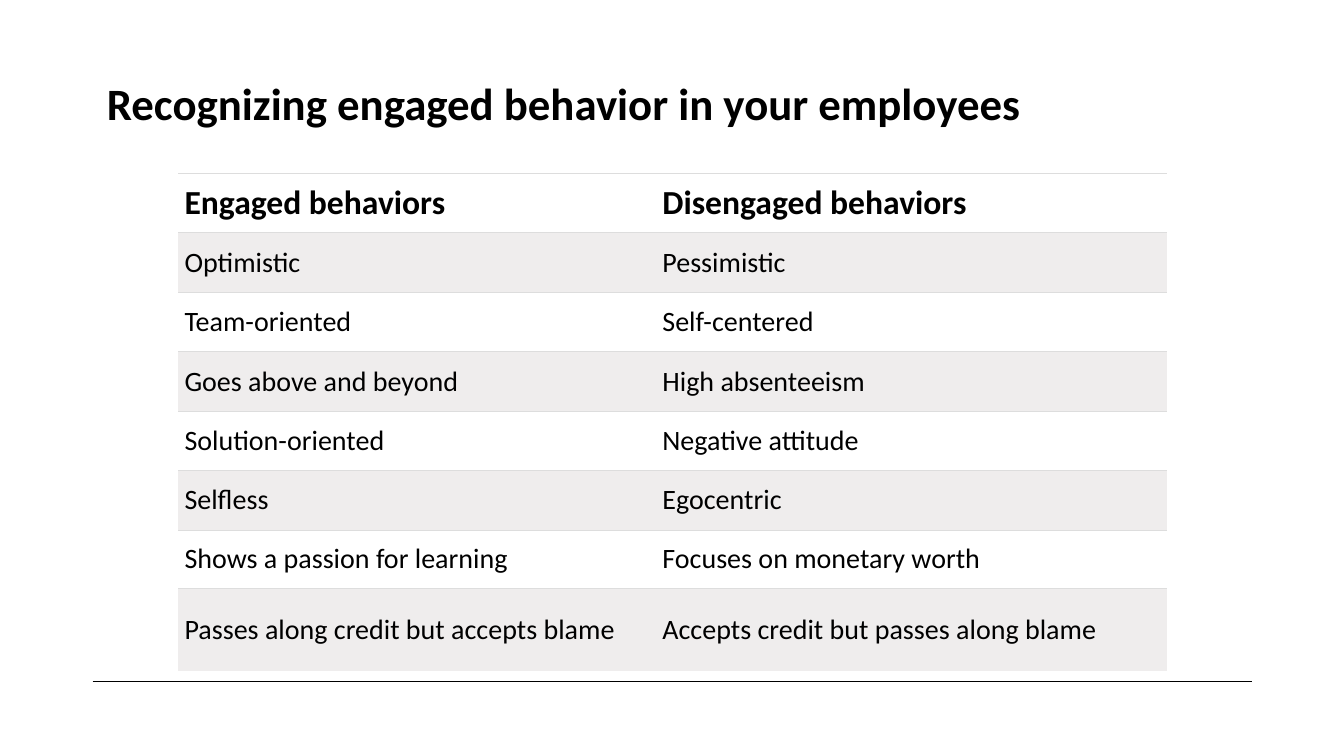
import pptx
import pptx.util
import pptx.dml.color
import pptx.enum.shapes
import pptx.enum.text
import pptx.oxml.ns
from lxml import etree

PX = 9144  # 100 px to the inch
BLACK, GREY, BAND = "000000", "DDDDDD", "EFEDED"

ROWS = [
    ("Engaged behaviors", "Disengaged behaviors"),
    ("Optimistic", "Pessimistic"),
    ("Team-oriented", "Self-centered"),
    ("Goes above and beyond", "High absenteeism"),
    ("Solution-oriented", "Negative attitude"),
    ("Selfless", "Egocentric"),
    ("Shows a passion for learning", "Focuses on monetary worth"),
    ("Passes along credit but accepts blame",
     "Accepts credit but passes along blame"),
]
WIDTHS = [474, 506]
HEIGHTS = [59] * 6 + [58, 82]


def px(*nums):
    return [pptx.util.Emu(n * PX) for n in nums]


def color(code):
    return pptx.dml.color.RGBColor.from_string(code)


def write(frame, text, size=20, bold=False, font="Calibri", ink=BLACK, gap=1.0):
    para = frame.paragraphs[0]
    para.alignment = pptx.enum.text.PP_ALIGN.LEFT
    para.line_spacing = gap
    run = para.add_run()
    run.text = text
    run.font.name, run.font.size, run.font.bold = font, pptx.util.Pt(size), bold
    run.font.color.rgb = color(ink)


class Deck:
    def __init__(self, wide, high):
        self.file = pptx.Presentation()
        self.file.slide_width, self.file.slide_height = px(wide, high)
        self.slide = self.file.slides.add_slide(self.file.slide_layouts[5])

    def title(self, text, box, **style):
        shape = self.slide.shapes.title
        shape.left, shape.top, shape.width, shape.height = px(*box)
        shape.text_frame.vertical_anchor = pptx.enum.text.MSO_ANCHOR.MIDDLE
        write(shape.text_frame, text, **style)

    def line(self, ends, ink=BLACK, width=0.25):
        kind = pptx.enum.shapes.MSO_CONNECTOR.STRAIGHT
        rule = self.slide.shapes.add_connector(kind, *px(*ends))
        rule.line.color.rgb = color(ink)
        rule.line.width = pptx.util.Pt(width)
        etree.SubElement(rule.element.spPr, pptx.oxml.ns.qn("a:effectLst"))

    def border(self, cell, sides):
        props = cell._tc.get_or_add_tcPr()
        for side in "LRTB":
            edge = etree.SubElement(props, pptx.oxml.ns.qn("a:ln" + side))
            if side in sides:
                edge.set("w", str(pptx.util.Pt(0.75)))
                fill = etree.SubElement(edge, pptx.oxml.ns.qn("a:solidFill"))
                tint = etree.SubElement(fill, pptx.oxml.ns.qn("a:srgbClr"))
                tint.set("val", GREY)
            else:
                edge.set("w", "0")
                etree.SubElement(edge, pptx.oxml.ns.qn("a:noFill"))

    def cell(self, cell, text, band, sides, **style):
        cell.margin_left = cell.margin_right = px(6)[0]
        cell.margin_top = cell.margin_bottom = px(6)[0]
        cell.vertical_anchor = pptx.enum.text.MSO_ANCHOR.MIDDLE
        self.border(cell, sides)
        if band:
            cell.fill.solid()
            cell.fill.fore_color.rgb = color(BAND)
        else:
            cell.fill.background()
        write(cell.text_frame, text, **style)

    def table(self, left, top, rows, widths, heights):
        box = px(left, top, sum(widths), sum(heights))
        grid = self.slide.shapes.add_table(len(rows), len(widths), *box).table
        grid.first_row = grid.horz_banding = False
        for col, width in zip(grid.columns, px(*widths)):
            col.width = width
        for row, height in zip(grid.rows, px(*heights)):
            row.height = height
        for r, texts in enumerate(rows):
            head, last = r == 0, r == len(rows) - 1
            for c, text in enumerate(texts):
                self.cell(grid.cell(r, c), text, band=r % 2 == 1,
                          sides="T" if last else "TB",
                          size=24 if head else 20, bold=head)


def main():
    deck = Deck(1333, 750)
    # Footer rule
    deck.line((92, 676, 1242, 676))
    # Title
    deck.title("Recognizing engaged behavior in your employees",
               (96, 65, 1153, 80), size=32, bold=True, gap=0.9)
    # Behavior table
    deck.table(177, 172, ROWS, WIDTHS, HEIGHTS)
    deck.file.save("out.pptx")


if __name__ == "__main__":
    main()
